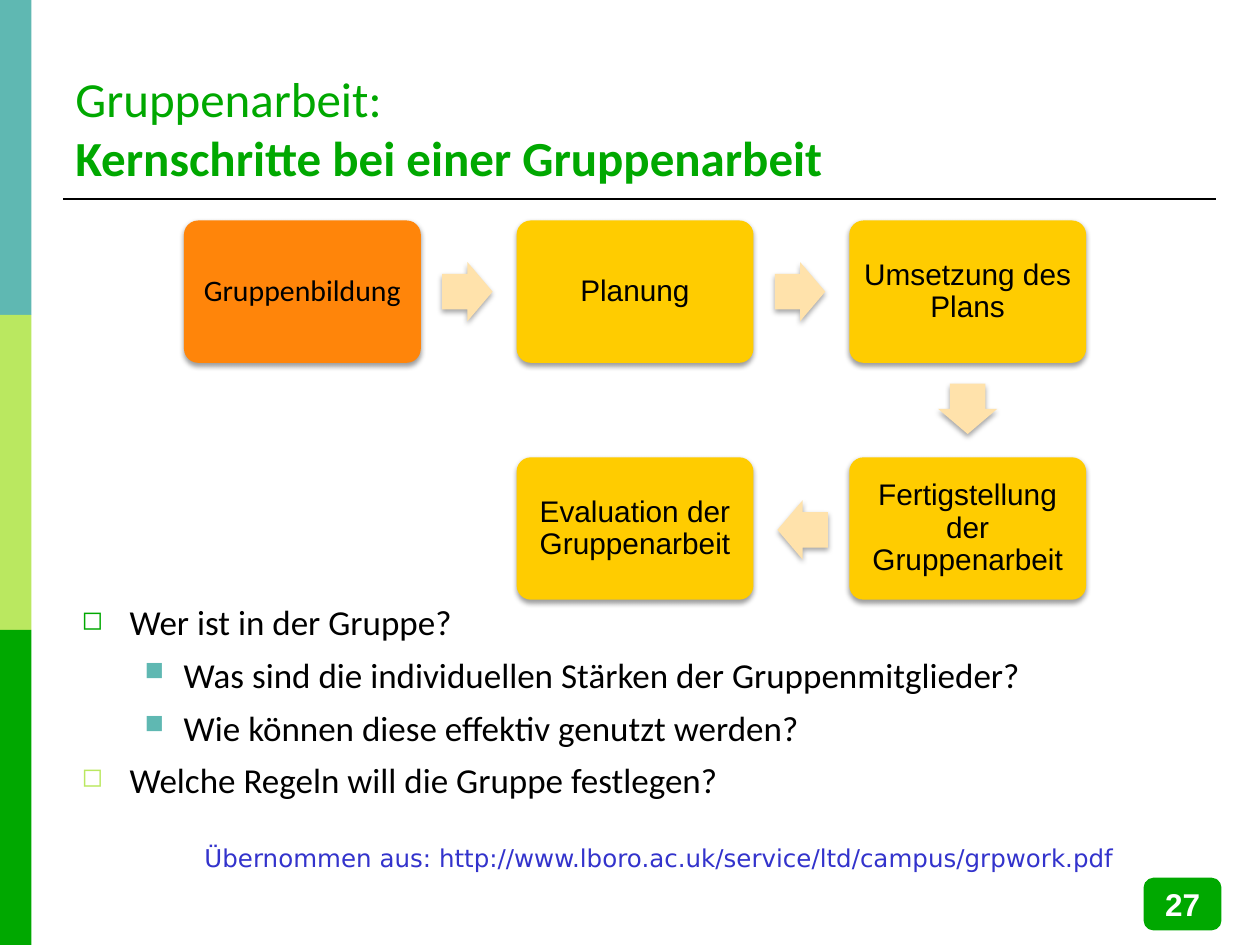
"""Build a slide on the key steps of group work, with a process flow and bullets."""
from lxml import etree
from pptx import Presentation
from pptx.dml.color import RGBColor
from pptx.enum import shapes, text
from pptx.oxml import ns
from pptx.util import Inches, Pt

TEAL = RGBColor(0x5F, 0xB8, 0xB2)
LIME = RGBColor(0xBA, 0xE8, 0x60)
GREEN = RGBColor(0x00, 0xA8, 0x00)
ORANGE = RGBColor(0xFF, 0x85, 0x0A)
YELLOW = RGBColor(0xFF, 0xCC, 0x00)
CREAM = RGBColor(0xFF, 0xE2, 0xAB)
BLUE = RGBColor(0x33, 0x33, 0xCC)
BLACK = RGBColor(0x00, 0x00, 0x00)
WHITE = RGBColor(0xFF, 0xFF, 0xFF)

deck = Presentation()
deck.slide_width = Inches(10)
deck.slide_height = Inches(7.5)
page = deck.slides.add_slide(deck.slide_layouts[6])


def add_block(kind, left, top, width, height, fill, shadow_opacity=0):
    block = page.shapes.add_shape(
        kind, Inches(left), Inches(top), Inches(width), Inches(height))
    block.shadow.inherit = False
    block.fill.solid()
    block.fill.fore_color.rgb = fill
    block.line.fill.background()
    if shadow_opacity:
        effects = block.element.spPr.find(ns.qn("a:effectLst"))
        shadow = etree.SubElement(
            effects, ns.qn("a:outerShdw"), blurRad=str(Pt(3.1)),
            dist=str(Pt(1.7)), dir="5400000", rotWithShape="0")
        color = etree.SubElement(shadow, ns.qn("a:srgbClr"), val=str(BLACK))
        etree.SubElement(color, ns.qn("a:alpha"), val=str(shadow_opacity * 1000))
    return block


def style(para, size, font, color, bold=False):
    for span in para.runs:
        span.font.size = Pt(size)
        span.font.name = font
        span.font.color.rgb = color
        span.font.bold = bold


for index, color in enumerate([TEAL, LIME, GREEN]):
    add_block(shapes.MSO_SHAPE.RECTANGLE, 0, index * 2.5, 0.25, 2.5, color)

rule = page.shapes.add_connector(
    shapes.MSO_CONNECTOR.STRAIGHT, Inches(0.5), Inches(1.58), Inches(9.65), Inches(1.58))
rule.line.color.rgb = BLACK
rule.line.width = Pt(1.5)
etree.SubElement(rule.element.spPr, ns.qn("a:effectLst"))

title = page.shapes.add_textbox(Inches(0.5), Inches(0.28), Inches(9.15), Inches(1.25))
title.text_frame.word_wrap = True
title.text_frame.vertical_anchor = text.MSO_ANCHOR.BOTTOM
title.text_frame.text = "Gruppenarbeit:\vKernschritte bei einer Gruppenarbeit"
heading = title.text_frame.paragraphs[0]
style(heading, 28, "Calibri", GREEN)
heading.runs[1].font.bold = True

steps = [
    ("Gruppenbildung", 0, 0, ORANGE, "Calibri"),
    ("Planung", 1, 0, YELLOW, "Arial"),
    ("Umsetzung des Plans", 2, 0, YELLOW, "Arial"),
    ("Fertigstellung der Gruppenarbeit", 2, 1, YELLOW, "Arial"),
    ("Evaluation der Gruppenarbeit", 1, 1, YELLOW, "Arial"),
]
for label, column, row, fill, font in steps:
    step = add_block(shapes.MSO_SHAPE.ROUNDED_RECTANGLE, 1.46 + column * 2.64,
                     1.75 + row * 1.88, 1.88, 1.13, fill, 38)
    step.adjustments[0] = 0.1
    frame = step.text_frame
    frame.word_wrap = True
    frame.vertical_anchor = text.MSO_ANCHOR.MIDDLE
    frame.margin_left = frame.margin_right = Inches(0.07)
    frame.margin_top = frame.margin_bottom = Inches(0.07)
    frame.text = label
    para = frame.paragraphs[0]
    para.alignment = text.PP_ALIGN.CENTER
    para.line_spacing = 0.9
    style(para, 17, font, BLACK)

for left, top, rotation in [(3.51, 2.08, 0), (6.15, 2.08, 0), (7.48, 3.01, 90), (6.17, 3.97, 180)]:
    arrow = add_block(shapes.MSO_SHAPE.RIGHT_ARROW, left, top, 0.4, 0.47, CREAM, 35)
    arrow.adjustments[0] = 0.6
    arrow.adjustments[1] = 0.5
    arrow.rotation = rotation

questions = [
    ("Wer ist in der Gruppe?", 0, "◻", GREEN),
    ("Was sind die individuellen Stärken der Gruppenmitglieder?", 1, "■", TEAL),
    ("Wie können diese effektiv genutzt werden?", 1, "■", TEAL),
    ("Welche Regeln will die Gruppe festlegen?", 0, "◻", LIME),
]
body = page.shapes.add_textbox(Inches(0.55), Inches(4.72), Inches(9.15), Inches(1.79))
body.text_frame.word_wrap = True
body.text_frame.text = "\n".join(question[0] for question in questions)
for para, (_, level, bullet, color) in zip(body.text_frame.paragraphs, questions):
    para.level = level
    margin, indent = [(0.38, -0.38), (0.81, -0.31)][level]
    props = para._p.get_or_add_pPr()
    props.set("marL", str(Inches(margin)))
    props.set("indent", str(Inches(indent)))
    bullet_color = etree.SubElement(props, ns.qn("a:buClr"))
    etree.SubElement(bullet_color, ns.qn("a:srgbClr"), val=str(color))
    etree.SubElement(props, ns.qn("a:buSzPct"), val="75000")
    etree.SubElement(props, ns.qn("a:buChar"), char=bullet)
    para.space_after = Pt(6)
    style(para, 20, "Calibri", BLACK)

credit = page.shapes.add_textbox(Inches(0.83), Inches(6.64), Inches(8.11), Inches(0.34))
credit.text_frame.word_wrap = True
credit.text_frame.text = "Übernommen aus: http://www.lboro.ac.uk/service/ltd/campus/grpwork.pdf"
credit.text_frame.paragraphs[0].alignment = text.PP_ALIGN.RIGHT
style(credit.text_frame.paragraphs[0], 14, "DejaVu Sans", BLUE)

badge = add_block(shapes.MSO_SHAPE.ROUNDED_RECTANGLE, 9.09, 6.98, 0.59, 0.39, GREEN)
badge.line.color.rgb = GREEN
badge.line.width = Pt(2)
badge.text_frame.vertical_anchor = text.MSO_ANCHOR.MIDDLE
badge.text_frame.text = "27"
badge.text_frame.paragraphs[0].alignment = text.PP_ALIGN.CENTER
style(badge.text_frame.paragraphs[0], 18, "Arial", WHITE, bold=True)

deck.save("out.pptx")
